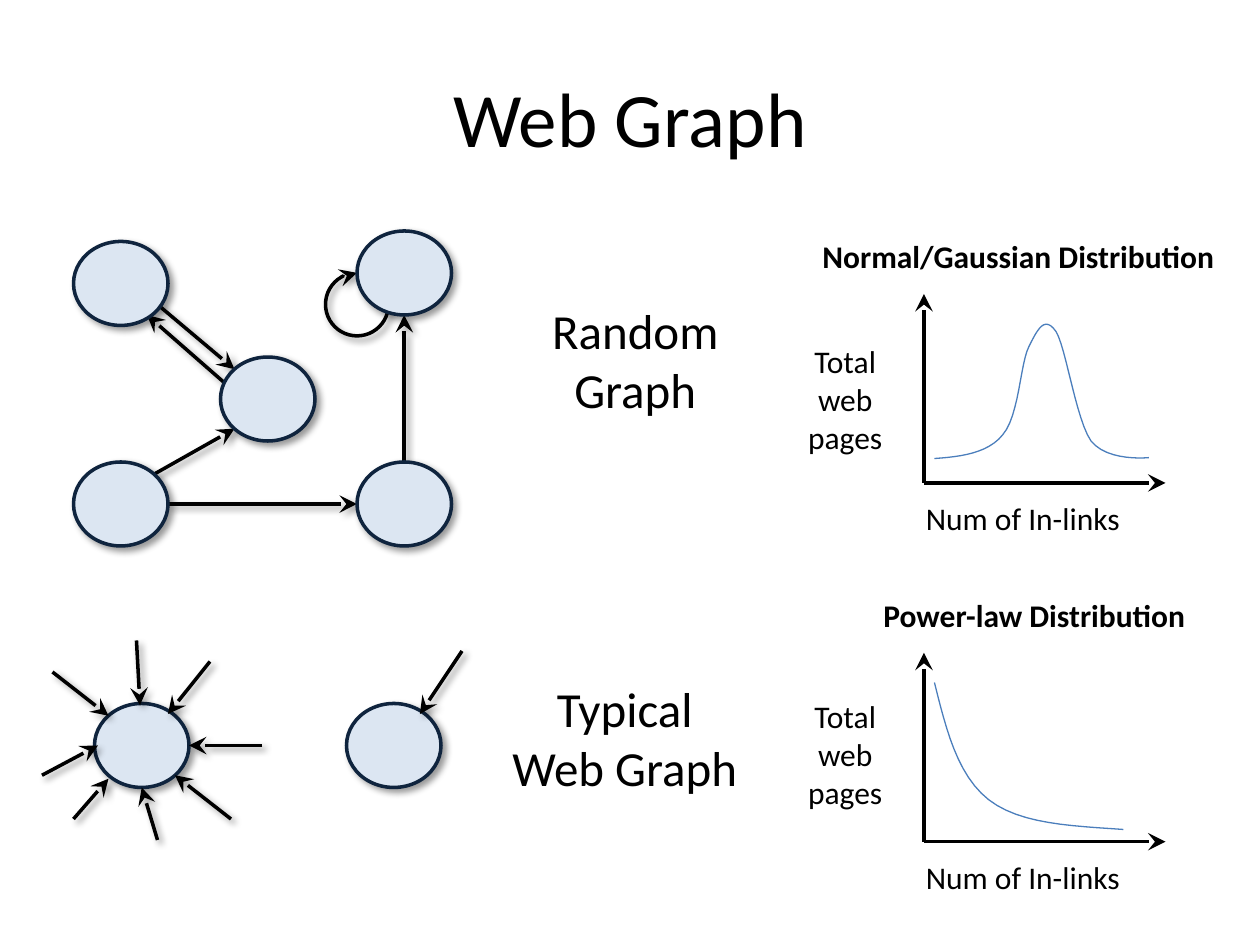
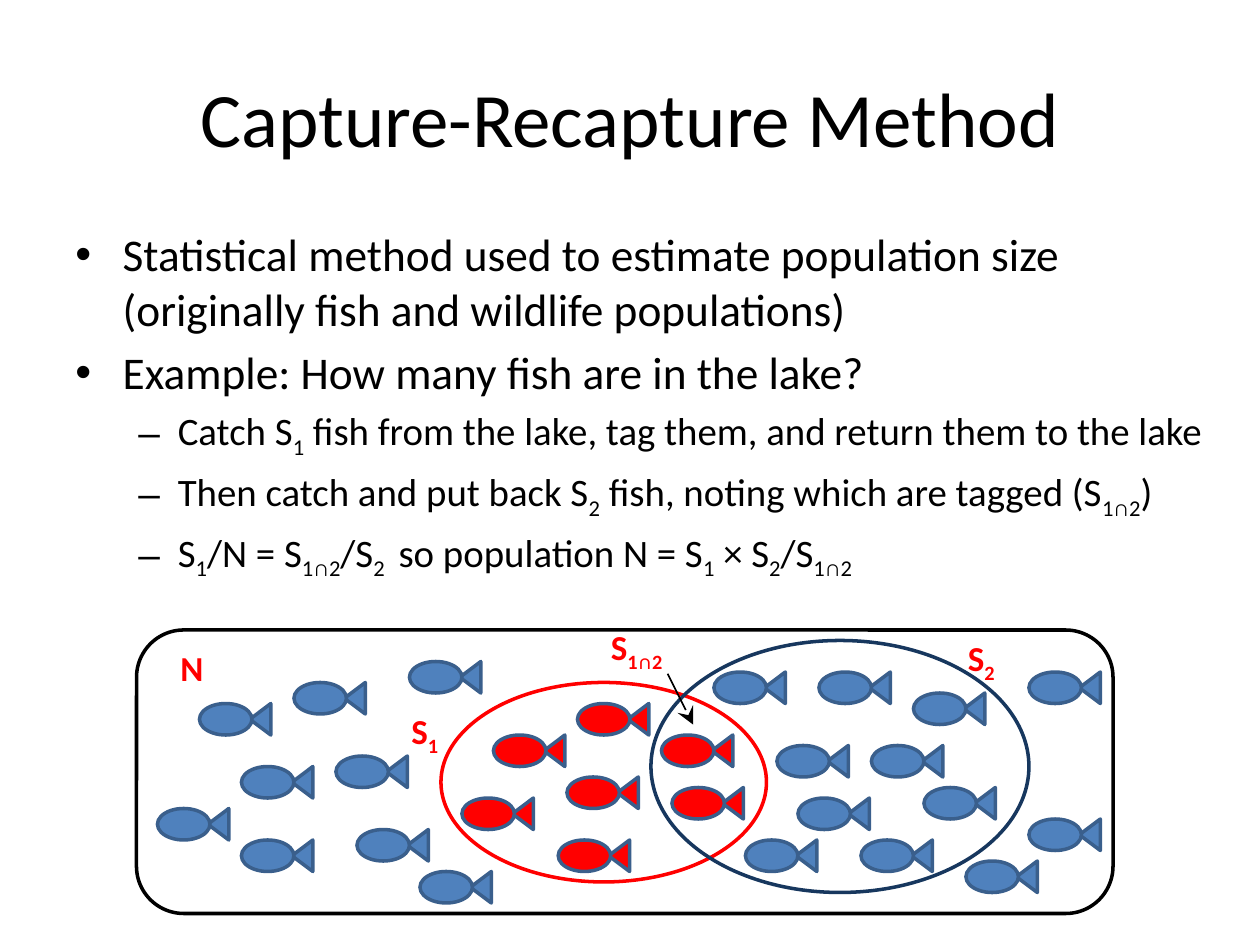
from lxml import etree
from pptx import Presentation
from pptx.dml.color import RGBColor
from pptx.enum.shapes import MSO_CONNECTOR, MSO_SHAPE
from pptx.enum.text import MSO_ANCHOR, MSO_AUTO_SIZE, PP_ALIGN
from pptx.oxml.ns import qn
from pptx.util import Pt

OVAL = MSO_SHAPE.OVAL
ROUND = MSO_SHAPE.ROUNDED_RECTANGLE
WEDGE = MSO_SHAPE.ISOSCELES_TRIANGLE
ARC = MSO_SHAPE.ARC
LINE = MSO_CONNECTOR.STRAIGHT
LEFT, MID = PP_ALIGN.LEFT, PP_ALIGN.CENTER
CENTRE = MSO_ANCHOR.MIDDLE
GROW = MSO_AUTO_SIZE.SHAPE_TO_FIT_TEXT

FONT = "Calibri"
BLACK, RED, BLUE = "000000", "FF0000", "4F81BD"
PALE, DARK, NAVY = "DCE6F2", "0F243E", "17375E"
CURVE, SCALE = "4B7EBC", "3A5F8C"


def paint(code):
    return RGBColor.from_string(code)


def bend(start, parts, steps=12):
    """Return points along a chain of cubic curves."""
    points = [start]
    for a, b, end in parts:
        knots = (points[-1], a, b, end)
        for step in range(1, steps + 1):
            t = step / steps
            u = 1 - t
            loads = (u ** 3, 3 * u * u * t, 3 * u * t * t, t ** 3)
            points.append(tuple(
                sum(w * k[i] for w, k in zip(loads, knots)) for i in (0, 1)))
    return points


class Deck:
    """Holds the shared style and the current slide."""

    def __init__(self):
        self.show = Presentation()
        self.show.slide_width, self.show.slide_height = Pt(720), Pt(540)

    def page(self, title):
        self.slide = self.show.slides.add_slide(self.show.slide_layouts[6])
        self.pool = self.slide.shapes
        frame = self.text((36, 21.6, 648, 90), title, 44, grow=False)
        frame.vertical_anchor = CENTRE

    def runs(self, para, words, size, color=BLACK, bold=False):
        """Add runs; parts between underscores are subscripts."""
        for i, part in enumerate(words.split("_")):
            if not part:
                continue
            run = para.add_run()
            run.text = part
            font = run.font
            font.name, font.size, font.bold = FONT, Pt(size), bold
            font.color.rgb = paint(color)
            if i % 2:
                font._element.set("baseline", "-25000")

    def text(self, box, words, size, color=BLACK, bold=False, align=MID,
             grow=True):
        frame = self.pool.add_textbox(*map(Pt, box)).text_frame
        frame.word_wrap = True
        if grow:
            frame.auto_size = GROW
        para = frame.paragraphs[0]
        para.alignment = align
        for i, row in enumerate(words.split("\n")):
            if i:
                para.add_line_break()
            self.runs(para, row, size, color, bold)
        return frame

    def list(self, box, items):
        frame = self.pool.add_textbox(*map(Pt, box)).text_frame
        frame.word_wrap = True
        styles = ((25.9, "•", 27, -27), (22.2, "–", 58.5, -22.5))
        for i, (level, words) in enumerate(items):
            para = frame.add_paragraph() if i else frame.paragraphs[0]
            size, mark, left, hang = styles[level]
            para.level = level
            para.space_before = Pt(size * 0.2)
            props = para._p.get_or_add_pPr()
            props.set("marL", str(Pt(left)))
            props.set("indent", str(Pt(hang)))
            etree.SubElement(props, qn("a:buFont"), typeface="Arial")
            etree.SubElement(props, qn("a:buChar"), char=mark)
            self.runs(para, words, size)

    def shade(self, item, on):
        """Give an item a soft shadow, or none at all."""
        props = item._element.spPr
        effects = props.find(qn("a:effectLst"))
        if effects is None:
            effects = etree.SubElement(props, qn("a:effectLst"))
        if on:
            glow = etree.SubElement(
                effects, qn("a:outerShdw"), blurRad=str(Pt(4)),
                dist=str(Pt(3)), dir="2700000", algn="tl", rotWithShape="0")
            tint = etree.SubElement(glow, qn("a:srgbClr"), val=BLACK)
            etree.SubElement(tint, qn("a:alpha"), val="40000")

    def stroke(self, item, color, width=2, head=False):
        item.line.color.rgb = paint(color)
        item.line.width = Pt(width)
        if head:
            etree.SubElement(item._element.spPr.find(qn("a:ln")),
                             qn("a:tailEnd"), type="stealth", w="lg", len="lg")

    def shape(self, kind, box, line, fill=None, shade=False, head=False,
              turn=0):
        item = self.pool.add_shape(kind, *map(Pt, box))
        item.shadow.inherit = False
        item.rotation = turn
        if fill:
            item.fill.solid()
            item.fill.fore_color.rgb = paint(fill)
        else:
            item.fill.background()
        self.stroke(item, line, head=head)
        self.shade(item, shade)
        return item

    def arrow(self, x1, y1, x2, y2, width=2, shade=True):
        item = self.pool.add_connector(LINE, Pt(x1), Pt(y1), Pt(x2), Pt(y2))
        self.stroke(item, BLACK, width, head=True)
        self.shade(item, shade)

    def curve(self, points):
        spots = [(Pt(x), Pt(y)) for x, y in points]
        maker = self.pool.build_freeform(*spots[0], scale=1.0)
        maker.add_line_segments(spots[1:], close=False)
        item = maker.convert_to_shape()
        item.shadow.inherit = False
        item.fill.background()
        self.stroke(item, CURVE, 0.75)

    def node(self, x, y):
        self.shape(OVAL, (x, y, 54, 48), DARK, PALE, shade=True)

    def plot(self, base, name, left, wide, side, start, parts):
        """Draw a pair of axes with labels and a curve."""
        x = 528
        self.arrow(x, base, x, base - 108, shade=False)
        self.arrow(x, base, x + 138, base, shade=False)
        self.text((left, base - 144, wide, 29), name, 18, bold=True)
        self.text((444, side, 78, 73), "Total\nweb pages", 18)
        self.text((522, base + 5.5, 156, 29), "Num of In-links", 18,
                  align=LEFT)
        self.curve([(x + dx, base + dy) for dx, dy in bend(start, parts)])

    def fish(self, x, y, fill):
        self.pool = self.slide.shapes.add_group_shape().shapes
        self.shape(WEDGE, (x + 25.75, y + 3, 18, 12), SCALE, fill, turn=270)
        self.shape(OVAL, (x, y, 30, 18), SCALE, fill)
        self.pool = self.slide.shapes


BELL = ((6, -14), [
    ((21, -15), (36.5, -17), (45, -27.5)),
    ((54.5, -38.5), (55, -68.5), (60, -78)),
    ((65, -88), (69, -96), (75.5, -86.5)),
    ((81, -78), (87, -36), (95.5, -24)),
    ((105, -12), (128.5, -14.5), (128.5, -14.5))])
DECAY = ((6, -91), [
    ((12.5, -65), (19, -38), (37, -24)),
    ((55, -10), (84.5, -9), (114, -7))])

EDGES = [(88, 271, 134, 245), (96, 288, 204, 288), (90, 174, 134, 211),
         (132, 222, 84, 180), (231, 264, 231, 180)]
NODES = [(204, 264), (42, 264), (204, 132), (126, 204), (42, 138)]
LINKS = [(30, 384, 62, 409), (120, 378, 96, 408), (78, 366, 80, 403),
         (24, 443, 56, 426), (42, 468, 62, 445), (90, 480, 81, 450),
         (132, 468, 100, 443), (150, 426, 108, 426), (264, 372, 240, 408)]

PLAIN = [(114, 402), (138, 438), (168, 390), (192, 432), (234, 378),
         (204, 474), (138, 480), (408, 384), (444, 426), (456, 456),
         (468, 384), (528, 450), (492, 480), (522, 396), (552, 492),
         (240, 498), (90, 462), (498, 426), (426, 480), (588, 468),
         (588, 384)]
TAGGED = [(264, 456), (330, 402), (324, 444), (378, 420), (282, 420),
          (384, 450), (319, 480)]
STEPS = [
    (0, "Statistical method used to estimate population size "
        "(originally fish and wildlife populations)"),
    (0, "Example: How many fish are in the lake?"),
    (1, "Catch S_1_ fish from the lake, tag them, and return them to the lake"),
    (1, "Then catch and put back S_2_ fish, noting which are tagged "
        "(S_1∩2_)"),
    (1, "S_1_/N = S_1∩2_/S_2 _ so population N = S_1_ × S_2_/S_1∩2_")]
TAGS = [("N", 96, 366, 42), ("S_1_", 228, 402, 42),
        ("S_2_", 546, 360, 42), ("S_1∩2_", 342, 354, 54)]


def graph(deck):
    deck.page("Web Graph")
    for edge in EDGES:
        deck.arrow(*edge)
    loop = deck.shape(ARC, (186, 156, 36, 36), BLACK, shade=True, head=True,
                      turn=90)
    loop.adjustments[0], loop.adjustments[1] = 162, 108
    for x, y in NODES + [(54, 402), (198, 402)]:
        deck.node(x, y)
    for link in LINKS:
        deck.arrow(*link)
    deck.text((306, 168, 114, 75), "Random Graph", 28)
    deck.text((282, 384, 150, 75), "Typical Web Graph", 28)
    deck.plot(276, "Normal/Gaussian Distribution", 456, 252, 192, *BELL)
    deck.plot(481, "Power-law Distribution", 492, 198, 395, *DECAY)


def lake(deck):
    deck.page("Capture-Recapture Method")
    deck.list((36, 126, 666, 210), STEPS)
    for spots, fill in ((PLAIN, BLUE), (TAGGED, RED)):
        for x, y in spots:
            deck.fish(x, y, fill)
    deck.shape(ROUND, (78, 360, 558, 162), BLACK)
    deck.shape(OVAL, (252, 390, 186, 114), RED)
    deck.shape(OVAL, (372, 366, 216, 144), NAVY)
    for words, x, y, wide in TAGS:
        deck.text((x, y, wide, 31.5), words, 20, RED, True, LEFT)
    deck.arrow(381.5, 385, 396, 414, width=1, shade=False)


def main():
    deck = Deck()
    graph(deck)
    lake(deck)
    deck.show.save("out.pptx")


if __name__ == "__main__":
    main()
